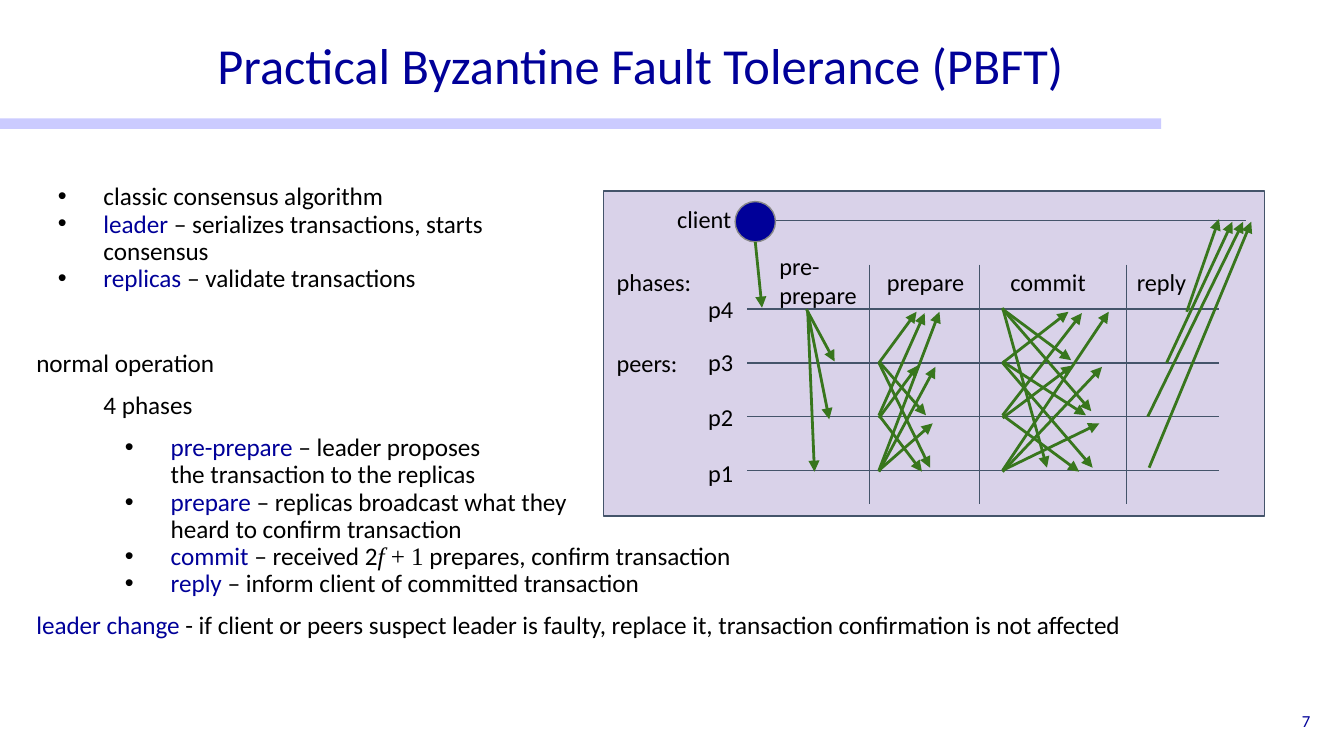
"""Build a slide that explains the phases of PBFT."""
from typing import NamedTuple

from lxml import etree
from pptx import Presentation
from pptx.dml.color import RGBColor
from pptx.enum import shapes, text
from pptx.oxml import ns
from pptx.util import Inches, Pt

COLOURS = {
    "ink": "000000", "navy": "000099", "bar": "9999FF", "panel": "D9D2E9",
    "slate": "44546A", "grey": "888888", "green": "38761D",
}
BODY_INSETS = (0.07, 0.04, 0.07, 0.04)
LABEL_INSETS = (0.1, 0.1, 0.05, 0.1)


class Span(NamedTuple):
    text: str
    colour: str = "ink"
    font: str = "Calibri"
    italic: bool = False


class Item(NamedTuple):
    spans: list[Span]
    before: float = 0
    margin: float = 0
    bullet: bool = False


class Label(NamedTuple):
    lines: list[str]
    left: float
    top: float
    width: float
    height: float = 0.42


class Line(NamedTuple):
    x1: float
    y1: float
    x2: float
    y2: float


class Broadcast(NamedTuple):
    start: float
    end: float
    prepare: float
    commit: float


def term(name: str, rest: str) -> list[Span]:
    return [Span(name, "navy"), Span(rest)]


ITEMS = [
    Item([Span("classic consensus algorithm")], 0, 0.5, True),
    Item(term("leader", " ‒ serializes transactions, starts\nconsensus"), 0, 0.5, True),
    Item(term("replicas", " ‒ validate transactions"), 0, 0.5, True),
    Item([Span("normal operation")], 31),
    Item([Span("4 phases")], 8, 0.5),
    Item(term("pre-prepare", " ‒ leader proposes \nthe transaction to the replicas"), 8, 1, True),
    Item(term("prepare", " ‒ replicas broadcast what they\nheard to confirm transaction"), 0, 1, True),
    Item(term("commit", " ‒ received 2") + [
        Span("f", font="Times New Roman", italic=True),
        Span(" + 1", font="Times New Roman"),
        Span(" prepares, confirm transaction"),
    ], 0, 1, True),
    Item(term("reply", " ‒ inform client of committed transaction"), 0, 1, True),
    Item(term("leader change", " - if client or peers suspect leader is faulty, replace it, "
              "transaction confirmation is not affected"), 8),
]
LABELS = [
    Label(["p4"], 5.17, 2.09, 0.39),
    Label(["p3"], 5.17, 2.48, 0.39),
    Label(["p2"], 5.17, 2.89, 0.39),
    Label(["p1"], 5.17, 3.31, 0.39),
    Label(["client"], 4.94, 1.42, 0.62),
    Label(["phases:"], 4.49, 1.89, 1.15),
    Label(["peers:"], 4.49, 2.49, 1.15),
    Label(["pre-", "prepare"], 5.7, 1.77, 1.15, 0.64),
    Label(["prepare"], 6.5, 1.89, 1.02),
    Label(["commit"], 7.42, 1.89, 1.02),
    Label(["reply"], 8.36, 1.89, 0.62),
]
BROADCASTS = [
    Broadcast(2.7, 2.32, 6.82, 7.95), Broadcast(3.09, 2.33, 6.88, 8.05),
    Broadcast(3.5, 2.32, 6.99, 8.25), Broadcast(2.69, 3.09, 6.89, 8.08),
    Broadcast(2.7, 3.48, 6.92, 8.13), Broadcast(3.09, 3.51, 6.86, 8.03),
    Broadcast(3.11, 2.72, 6.83, 7.98), Broadcast(3.51, 2.73, 6.96, 8.2),
    Broadcast(3.5, 3.15, 6.94, 8.18),
]
REQUESTS = [
    Line(5.62, 1.8, 5.67, 2.29), Line(6, 2.3, 6.21, 2.69),
    Line(6.01, 2.32, 6.17, 3.12), Line(6.01, 2.32, 6.06, 3.51),
]
LEADER_COMMITS = [
    Line(7.46, 2.3, 7.97, 2.68), Line(7.46, 2.3, 8.12, 3.06), Line(7.46, 2.29, 7.79, 3.48),
]
REPLIES = [
    Line(8.83, 2.32, 9.07, 1.63), Line(8.68, 2.7, 9.17, 1.65),
    Line(8.54, 3.1, 9.25, 1.65), Line(8.55, 3.48, 9.31, 1.65),
]


def rgb(name: str) -> RGBColor:
    return RGBColor.from_string(COLOURS[name])


def apply(target, values: dict) -> None:
    for name, value in values.items():
        setattr(target, name, value)


def add_mark(parent, tag: str, **values: str):
    return etree.SubElement(parent, ns.qn(tag), values)


def add_frame(page, left: float, top: float, width: float, height: float, insets: tuple):
    box = page.shapes.add_textbox(Inches(left), Inches(top), Inches(width), Inches(height))
    sides = ("margin_left", "margin_top", "margin_right", "margin_bottom")
    apply(box.text_frame, dict(zip(sides, map(Inches, insets)), word_wrap=True))
    return box.text_frame


def add_span(para, span: Span, size: float) -> None:
    for number, line in enumerate(span.text.split("\n")):
        if number:
            para.add_line_break()
        run = para.add_run()
        run.text = line
        apply(run.font, {"size": Pt(size), "name": span.font, "italic": span.italic})
        run.font.color.rgb = rgb(span.colour)


def add_items(frame, items: list[Item]) -> None:
    for number, item in enumerate(items):
        para = frame.add_paragraph() if number else frame.paragraphs[0]
        apply(para, {"line_spacing": 0.9, "space_before": Pt(item.before)})
        props = para._p.get_or_add_pPr()
        props.set("marL", str(Inches(item.margin)))
        props.set("indent", str(Inches(-0.34 if item.bullet else 0)))
        if item.bullet:
            add_mark(add_mark(props, "a:buClr"), "a:srgbClr", val=COLOURS["ink"])
            add_mark(props, "a:buFont", typeface="Arial")
            add_mark(props, "a:buChar", char="•")
        for span in item.spans:
            add_span(para, span, 13.5)


def add_label(page, label: Label) -> None:
    frame = add_frame(page, *label[1:], LABEL_INSETS)
    frame.auto_size = text.MSO_AUTO_SIZE.SHAPE_TO_FIT_TEXT
    for number, line in enumerate(label.lines):
        para = frame.add_paragraph() if number else frame.paragraphs[0]
        add_span(para, Span(line), 13)


def add_caption(page, place: tuple, words: str, size: float, align, spacing: float) -> None:
    frame = add_frame(page, *place, BODY_INSETS)
    frame.vertical_anchor = text.MSO_ANCHOR.MIDDLE
    para = frame.paragraphs[0]
    apply(para, {"alignment": align, "line_spacing": spacing})
    add_span(para, Span(words, "navy"), size)


def add_figure(page, kind, place: tuple, fill: str, outline: str = ""):
    figure = page.shapes.add_shape(kind, *map(Inches, place))
    figure.shadow.inherit = False
    figure.fill.solid()
    figure.fill.fore_color.rgb = rgb(fill)
    if outline:
        figure.line.color.rgb = rgb(outline)
        figure.line.width = Pt(0.75)
    else:
        figure.line.fill.background()
    return figure


def add_line(page, line: Line, arrow: bool = False) -> None:
    link = page.shapes.add_connector(shapes.MSO_CONNECTOR.STRAIGHT, *map(Inches, line))
    link.line.color.rgb = rgb("green" if arrow else "slate")
    link.line.width = Pt(1.5 if arrow else 0.75)
    if arrow:
        add_mark(link.line._get_or_add_ln(), "a:tailEnd", type="triangle")
    add_mark(link._element.spPr, "a:effectLst")


def main() -> None:
    deck = Presentation()
    apply(deck, {"slide_width": Inches(10), "slide_height": Inches(10 * 9 / 16)})
    page = deck.slides.add_slide(deck.slide_layouts[6])
    kinds = shapes.MSO_SHAPE
    bar = add_figure(page, kinds.RECTANGLE, (0, 0.88, 8.64, 0.08), "bar")
    add_mark(bar._element.spPr.find(".//" + ns.qn("a:srgbClr")), "a:alpha", val="50000")
    add_items(add_frame(page, 0.2, 1.33, 9.31, 4, BODY_INSETS), ITEMS)
    add_caption(page, (1.22, 0.14, 7.09, 0.74), "Practical Byzantine Fault Tolerance (PBFT)",
                27, text.PP_ALIGN.CENTER, 0.9)
    add_caption(page, (7.57, 5.21, 2.25, 0.3), "7", 9, text.PP_ALIGN.RIGHT, 1.0)
    add_figure(page, kinds.RECTANGLE, (4.49, 1.42, 4.92, 2.42), "panel", "slate")
    add_line(page, Line(5.64, 1.64, 9.27, 1.64))
    add_figure(page, kinds.OVAL, (5.47, 1.5, 0.3, 0.3), "navy", "grey")
    for row in range(4):
        add_line(page, Line(5.56, 2.3 + 0.4 * row, 9.07, 2.3 + 0.4 * row))
    prepares = [Line(6.54, cast.start, cast.prepare, cast.end) for cast in BROADCASTS]
    commits = [Line(7.46, cast.start, cast.commit, cast.end) for cast in BROADCASTS]
    for line in REQUESTS + prepares + commits + LEADER_COMMITS + REPLIES:
        add_line(page, line, arrow=True)
    for x in (6.47, 7.29, 8.38):
        add_line(page, Line(x, 1.97, x, 3.75))
    for label in LABELS:
        add_label(page, label)
    deck.save("out.pptx")


if __name__ == "__main__":
    main()
